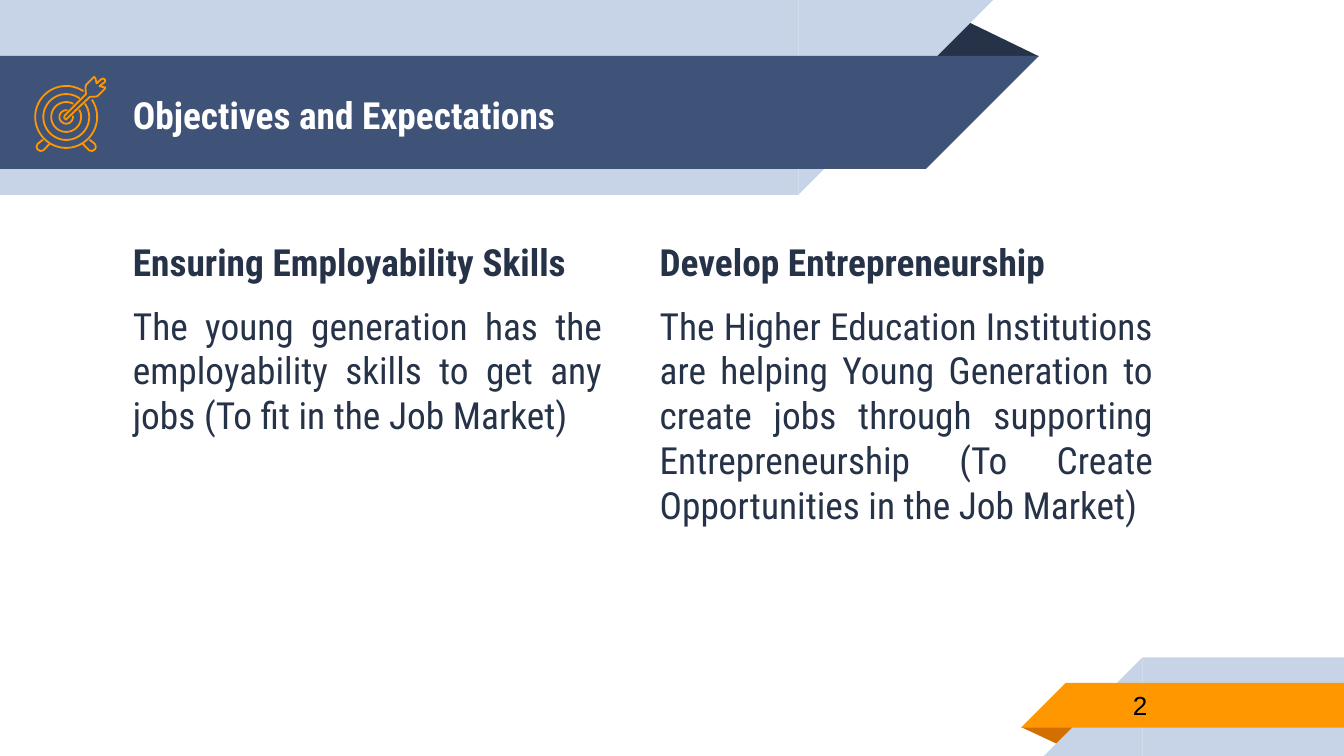
import math

import pptx
import pptx.dml.color
import pptx.enum.shapes
import pptx.enum.text
import pptx.util

Pt = pptx.util.Pt
Shape = pptx.enum.shapes.MSO_SHAPE
Align = pptx.enum.text.PP_ALIGN
Anchor = pptx.enum.text.MSO_ANCHOR

COLORS = {
    "navy": "263248",
    "blue": "3F5378",
    "pale": "C7D3E6",
    "orange": "FF9800",
    "rust": "D26F00",
    "white": "FFFFFF",
    "black": "000000",
}


class Deck:
    """Hold the style and the current slide, and draw each kind of element."""

    def __init__(self):
        self.presentation = pptx.Presentation()
        self.presentation.slide_width = Pt(720)
        self.presentation.slide_height = Pt(405)
        self.font = "Roboto Condensed"
        self.slide = self.presentation.slides.add_slide(
            self.presentation.slide_layouts[6])

    def color(self, name):
        return pptx.dml.color.RGBColor.from_string(COLORS[name])

    def block(self, kind, left, top, width, height, fill, rotation=0):
        block = self.slide.shapes.add_shape(
            kind, Pt(left), Pt(top), Pt(width), Pt(height))
        block.shadow.inherit = False
        block.rotation = rotation
        block.fill.solid()
        block.fill.fore_color.rgb = self.color(fill)
        block.line.fill.background()
        return block

    def fold(self, left, top, width, height, fill, rotation=0):
        fold = self.block(Shape.ISOSCELES_TRIANGLE, left, top, width, height,
                          fill, rotation)
        fold.adjustments[0] = 0.324

    def left_band(self, top, width, height, fill):
        self.block(Shape.RECTANGLE, 0, top, width, height, fill)
        self.block(Shape.RIGHT_TRIANGLE, width, top, height, height, fill, 90)

    def right_band(self, left, top, height, fill):
        self.block(Shape.RECTANGLE, left, top, 720 - left, height, fill)
        self.block(Shape.RIGHT_TRIANGLE, left - height, top, height, height,
                   fill, 270)

    def text(self, left, top, width, height, paragraphs, color, size=20,
             font=None, anchor=Anchor.TOP, space_after=0):
        frame = self.slide.shapes.add_textbox(
            Pt(left), Pt(top), Pt(width), Pt(height)).text_frame
        frame.word_wrap = True
        frame.vertical_anchor = anchor
        frame.margin_left = frame.margin_right = Pt(7.2)
        frame.margin_top = frame.margin_bottom = Pt(7.2)
        for index, (words, bold, align) in enumerate(paragraphs):
            paragraph = frame.add_paragraph() if index else frame.paragraphs[0]
            paragraph.text = words
            paragraph.alignment = align
            paragraph.space_after = Pt(space_after)
            paragraph.font.name = font or self.font
            paragraph.font.size = Pt(size)
            paragraph.font.bold = bold
            paragraph.font.color.rgb = self.color(color)

    def outline(self, points, close=False):
        start, *rest = [(Pt(x), Pt(y)) for x, y in points]
        builder = self.slide.shapes.build_freeform(*start)
        builder.add_line_segments(rest, close=close)
        stroke = builder.convert_to_shape()
        stroke.shadow.inherit = False
        stroke.fill.background()
        stroke.line.color.rgb = self.color("orange")
        stroke.line.width = Pt(0.96)

    def ring(self, center_x, center_y, radius, gap):
        steps = 48
        angles = [math.radians(45 + gap / 2 + (360 - gap) * step / steps)
                  for step in range(steps + 1)]
        self.outline([(center_x + radius * math.cos(angle),
                       center_y - radius * math.sin(angle))
                      for angle in angles])

    def target(self, center_x, center_y):
        for radius, gap in ((16.6, 22), (12.3, 18), (8, 32), (3.6, 68)):
            self.ring(center_x, center_y, radius, gap)
        foot = [(-12.5, 12.2), (-15.3, 14.4), (-15.9, 15.9), (-15.5, 17.3),
                (-13.9, 18.2), (-12.5, 18), (-11.7, 17.3), (-8.9, 14.4)]
        for side in (1, -1):
            self.outline([(center_x + side * x, center_y + y)
                          for x, y in foot])
        arrow = [(20.9, -15.8), (17.8, -16.5), (20.7, -18.7), (20.9, -19.8),
                 (19.9, -20.6), (18.7, -20.2), (16.3, -18), (15.6, -20.8),
                 (14.9, -21.5), (14.2, -20.8), (10.6, -17.2), (10.3, -15.6),
                 (10.6, -12.2), (-0.9, -0.7), (-1.1, 0.4), (-0.2, 1.4),
                 (0.5, 0.8), (12.7, -10.8), (14.9, -10.8), (16.7, -11.1),
                 (20.7, -15.1)]
        self.outline([(center_x + x, center_y + y) for x, y in arrow],
                     close=True)


def main():
    deck = Deck()

    deck.fold(495.4, 10.1, 61.2, 20.1, "navy")
    deck.left_band(0, 427.7, 104.4, "pale")
    deck.left_band(30, 496.1, 60.5, "blue")
    deck.fold(547.2, 389.6, 31, 9.8, "rust", 180)
    deck.right_band(612, 352.2, 52.8, "pale")
    deck.right_band(571, 365.8, 24, "orange")

    columns = (
        (64.1, 265.7, "Ensuring Employability Skills",
         "The young generation has the employability skills to get any jobs "
         "(To fit in the Job Market)"),
        (346.3, 278.6, "Develop Entrepreneurship",
         "The Higher Education Institutions are helping Young Generation to "
         "create jobs through supporting Entrepreneurship (To Create "
         "Opportunities in the Job Market)"),
    )
    for left, width, heading, body in columns:
        deck.text(left, 121, width, 214.6,
                  [(heading, True, Align.LEFT), (body, False, Align.JUSTIFY)],
                  "navy", space_after=10)

    deck.text(64.1, 31, 414, 60.5,
              [("Objectives and Expectations", True, Align.LEFT)],
              "white", anchor=Anchor.MIDDLE)
    deck.text(599.8, 365.2, 117.4, 25.2, [("2", False, Align.LEFT)],
              "black", size=14, font="Arial", anchor=Anchor.MIDDLE)
    deck.target(35.5, 62.7)

    deck.presentation.save("out.pptx")


if __name__ == "__main__":
    main()
